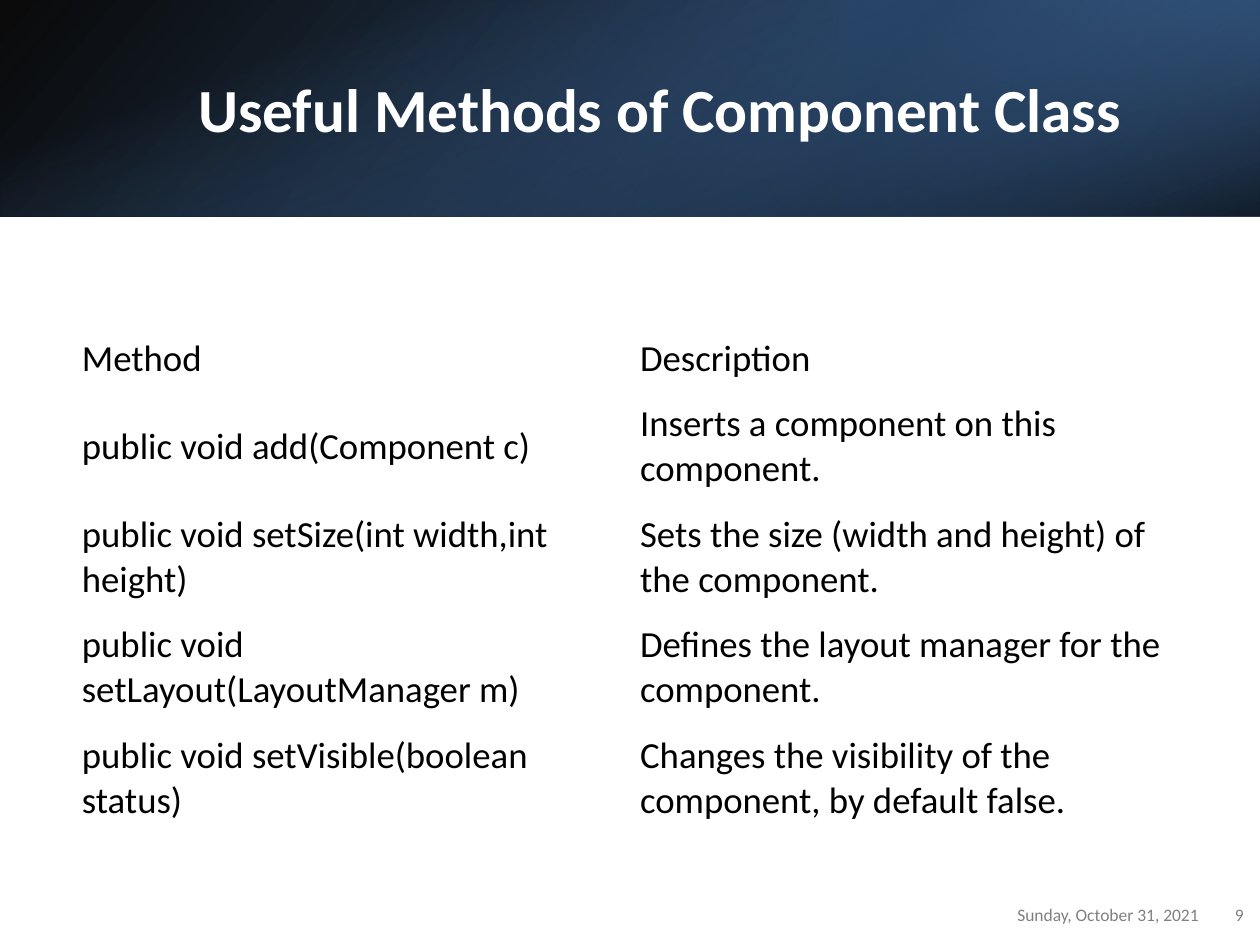
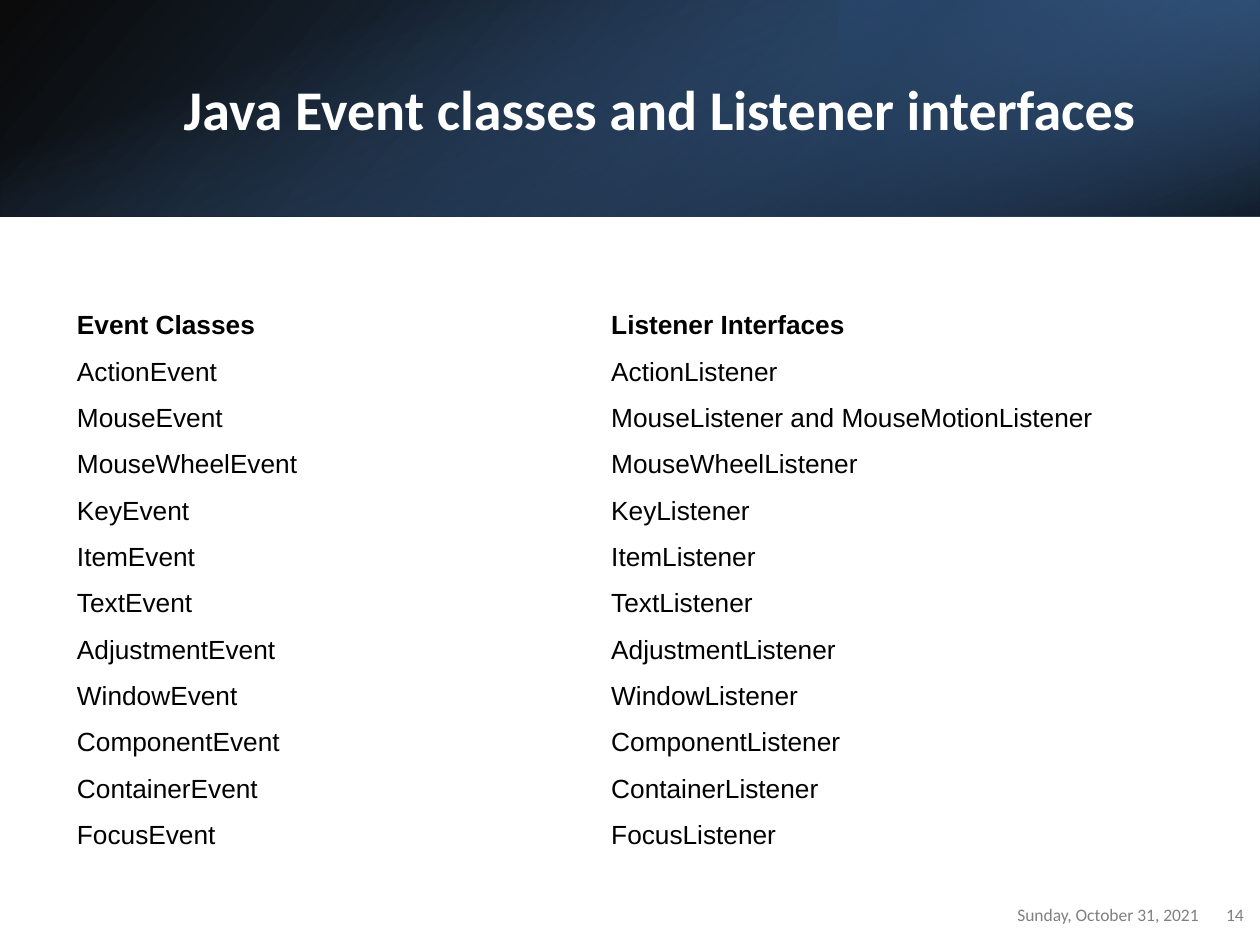
from lxml import etree
from pptx import Presentation
from pptx.dml.color import RGBColor as RGB
from pptx.enum.shapes import MSO_SHAPE as Shape
from pptx.enum.text import MSO_ANCHOR as Anchor, PP_ALIGN as Align
from pptx.oxml.ns import qn
from pptx.util import Pt

# Content
DATE = "Sunday, October 31, 2021"
METHODS = [
    ("Method", "Description"),
    ("public void add(Component c)", "Inserts a component on this component."),
    ("public void setSize(int width,int height)",
     "Sets the size (width and height) of the component."),
    ("public void setLayout(LayoutManager m)",
     "Defines the layout manager for the component."),
    ("public void setVisible(boolean status)",
     "Changes the visibility of the component, by default false."),
]
EVENTS = [
    ("Event Classes", "Listener Interfaces"),
    ("ActionEvent", "ActionListener"),
    ("MouseEvent", "MouseListener and MouseMotionListener"),
    ("MouseWheelEvent", "MouseWheelListener"),
    ("KeyEvent", "KeyListener"),
    ("ItemEvent", "ItemListener"),
    ("TextEvent", "TextListener"),
    ("AdjustmentEvent", "AdjustmentListener"),
    ("WindowEvent", "WindowListener"),
    ("ComponentEvent", "ComponentListener"),
    ("ContainerEvent", "ContainerListener"),
    ("FocusEvent", "FocusListener"),
]
PAGES = [
    dict(title="Useful Methods of Component Class", size=35, page="9",
         grid=dict(rows=METHODS, top=186.5, cols=(319, 326), head=37.3,
                   high=63.1, pad=(8.6, 4.3), font="Calibri", size=21,
                   bold=False)),
    dict(title="Java Event classes and Listener interfaces", size=32, page="14",
         grid=dict(rows=EVENTS, top=172.8, cols=(305.3, 339.8), head=26.5,
                   high=26.5, pad=(5.8, 2.9), font="Arial", size=15,
                   bold=True)),
]

# Shared look
WIDE, TALL, BAND, LEFT = 720, 540, 124, 38.2
BLACK, WHITE, GRAY = RGB(0, 0, 0), RGB(255, 255, 255), RGB(128, 128, 128)
NAVY, STEEL, BLUE = RGB(0x25, 0x40, 0x61), RGB(0x37, 0x60, 0x92), RGB(0x4F, 0x81, 0xBD)

# Band layers: box, rotation, flipped, gradient angle, stops (place, colour, opacity)
LAYERS = [
    ((0, 0, WIDE, BAND), 0, True, 140, [(0, BLACK, 96), (100, STEEL, 100)]),
    ((WIDE * 2 / 3, 0, WIDE / 3, BAND), 180, True, 320,
     [(19, NAVY, 68), (100, BLUE, 79)]),
    (((WIDE - BAND) / 2, (BAND - WIDE) / 2, BAND, WIDE), 90, False, 340,
     [(23, BLUE, 0), (99, BLACK, 74)]),
]


def style(par, font, size, color, bold=False):
    par.font.name, par.font.size, par.font.bold = font, Pt(size), bold
    par.font.color.rgb = color


def add_layer(slide, box, turn, flip, angle, stops):
    rect = slide.shapes.add_shape(Shape.RECTANGLE, *map(Pt, box))
    rect.shadow.inherit = False
    rect.line.fill.background()
    rect.rotation = turn
    props = rect._element.spPr
    if flip:
        props.xfrm.set("flipH", "1")
    # Gradient with transparency
    grad = etree.Element(qn("a:gradFill"), rotWithShape="1")
    marks = etree.SubElement(grad, qn("a:gsLst"))
    for place, color, alpha in stops:
        stop = etree.SubElement(marks, qn("a:gs"), pos=str(place * 1000))
        tint = etree.SubElement(stop, qn("a:srgbClr"), val=str(color))
        etree.SubElement(tint, qn("a:alpha"), val=str(alpha * 1000))
    etree.SubElement(grad, qn("a:lin"), ang=str(angle * 60000), scaled="0")
    props.find(qn("a:prstGeom")).addnext(grad)


def add_text(slide, box, text, align, size, color, bold=False, after=0):
    frame = slide.shapes.add_textbox(*map(Pt, box)).text_frame
    frame.word_wrap = True
    frame.vertical_anchor = Anchor.MIDDLE
    par = frame.paragraphs[0]
    par.text, par.alignment, par.space_after = text, align, Pt(after)
    style(par, "Calibri", size, color, bold)


def add_grid(slide, rows, top, cols, head, high, pad, font, size, bold):
    tall = head + high * (len(rows) - 1)
    table = slide.shapes.add_table(len(rows), len(cols), Pt(LEFT), Pt(top),
                                   Pt(sum(cols)), Pt(tall)).table
    table.first_row = table.horz_banding = False
    for col, width in zip(table.columns, cols):
        col.width = Pt(width)
    for r, row in enumerate(rows):
        table.rows[r].height = Pt(high if r else head)
        for c, text in enumerate(row):
            cell = table.cell(r, c)
            cell.text = text
            cell.fill.background()
            cell.vertical_anchor = Anchor.MIDDLE
            cell.margin_left = cell.margin_right = Pt(pad[0])
            cell.margin_top = cell.margin_bottom = Pt(pad[1])
            style(cell.text_frame.paragraphs[0], font, size, BLACK,
                  bold and r == 0)


def main():
    deck = Presentation()
    deck.slide_width, deck.slide_height = Pt(WIDE), Pt(TALL)
    for page in PAGES:
        slide = deck.slides.add_slide(deck.slide_layouts[6])
        for layer in LAYERS:
            add_layer(slide, *layer)
        add_text(slide, (80.6, 27.4, 593.3, 69), page["title"], Align.CENTER,
                 page["size"], WHITE, bold=True)
        # Footer
        for left, width, text in ((530, 162, DATE), (691.2, 26.6, page["page"])):
            add_text(slide, (left, 508.3, width, 28.8), text, Align.RIGHT,
                     10, GRAY, after=6)
        add_grid(slide, **page["grid"])
    deck.save("out.pptx")


if __name__ == "__main__":
    main()
